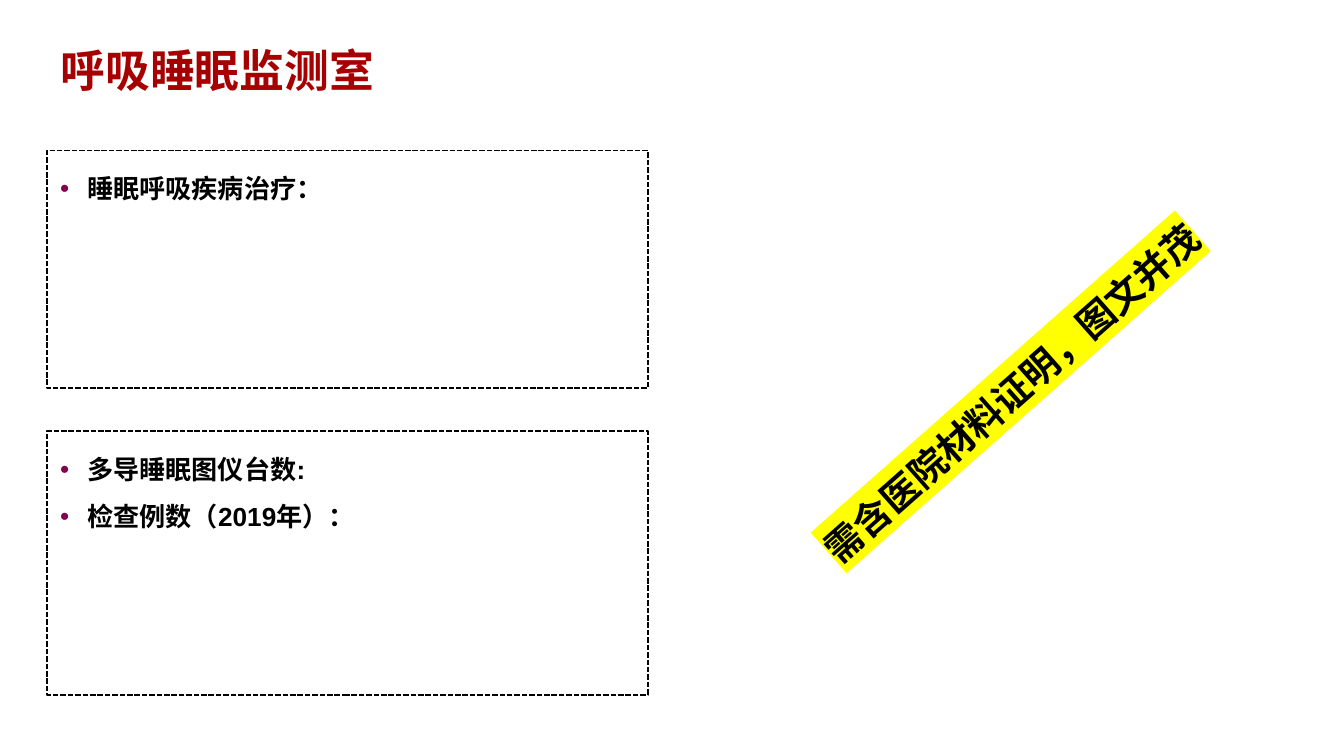
from lxml import etree
from pptx import Presentation
from pptx import util as u
from pptx.dml.color import RGBColor
from pptx.enum import dml, shapes, text
from pptx.oxml import ns

COLORS = {"title": "A60000", "ink": "000000", "bullet": "830051", "marker": "FFFF00"}


def color(name):
    """Return the palette colour of that name."""
    return RGBColor.from_string(COLORS[name])


def style(paragraph, size, ink="ink", face="Arial"):
    """Set the bold font of a left-aligned paragraph."""
    paragraph.alignment = text.PP_ALIGN.LEFT
    font = paragraph.font
    font.size, font.bold, font.name = u.Pt(size), True, face
    font.color.rgb = color(ink)


def add_bullet(paragraph):
    """Give a paragraph a coloured bullet with a hanging indent."""
    properties = paragraph._p.get_or_add_pPr()
    properties.set("marL", str(u.Inches(0.2)))
    properties.set("indent", str(-u.Inches(0.2)))
    bullet_color = etree.SubElement(properties, ns.qn("a:buClr"))
    etree.SubElement(bullet_color, ns.qn("a:srgbClr"), val=COLORS["bullet"])
    etree.SubElement(properties, ns.qn("a:buFont"), typeface="Arial")
    etree.SubElement(properties, ns.qn("a:buChar"), char="•")


def add_title(slide, box, wording):
    """Place the slide title in the box."""
    title = slide.shapes.title
    title.left, title.top, title.width, title.height = map(u.Inches, box)
    frame = title.text_frame
    frame.text = wording
    frame.margin_top = frame.margin_bottom = 0
    frame.vertical_anchor = text.MSO_ANCHOR.MIDDLE
    style(frame.paragraphs[0], 24, "title", "Noto Sans CJK SC")


def add_panel(slide, box, items):
    """Place a dashed panel with a bulleted list in the box."""
    panel = slide.shapes.add_shape(shapes.MSO_SHAPE.RECTANGLE, *map(u.Inches, box))
    panel.shadow.inherit = False
    panel.fill.background()
    panel.line.color.rgb = color("ink")
    panel.line.width = u.Pt(1)
    panel.line.dash_style = dml.MSO_LINE.SQUARE_DOT
    frame = panel.text_frame
    frame.vertical_anchor = text.MSO_ANCHOR.TOP
    frame.text = "\n".join(items)
    for paragraph in frame.paragraphs:
        paragraph.line_spacing = 1.5
        add_bullet(paragraph)
        style(paragraph, 14)


def add_reminder(slide, box, wording, rotation):
    """Place a slanted, highlighted reminder in the box."""
    reminder = slide.shapes.add_textbox(*map(u.Inches, box))
    reminder.rotation = rotation
    frame = reminder.text_frame
    frame.word_wrap = True
    frame.text = wording
    paragraph = frame.paragraphs[0]
    style(paragraph, 20)
    run_properties = paragraph.runs[0].font._element
    highlight = etree.SubElement(run_properties, ns.qn("a:highlight"))
    etree.SubElement(highlight, ns.qn("a:srgbClr"), val=COLORS["marker"])


def main():
    """Build the sleep monitoring room slide."""
    deck = Presentation()
    deck.slide_width = u.Inches(10)
    deck.slide_height = deck.slide_width * 9 // 16
    slide = deck.slides.add_slide(deck.slide_layouts[5])
    add_title(slide, (0.35, 0.24, 9.59, 0.55), "呼吸睡眠监测室")
    add_panel(slide, (0.35, 1.12, 4.47, 1.77), ["睡眠呼吸疾病治疗："])
    add_panel(slide, (0.35, 3.21, 4.47, 1.96), ["多导睡眠图仪台数:", "检查例数（2019年）："])
    add_reminder(slide, (5.62, 2.64, 3.99, 0.5), "需含医院材料证明，图文并茂", 318.5)
    deck.save("out.pptx")


if __name__ == "__main__":
    main()
